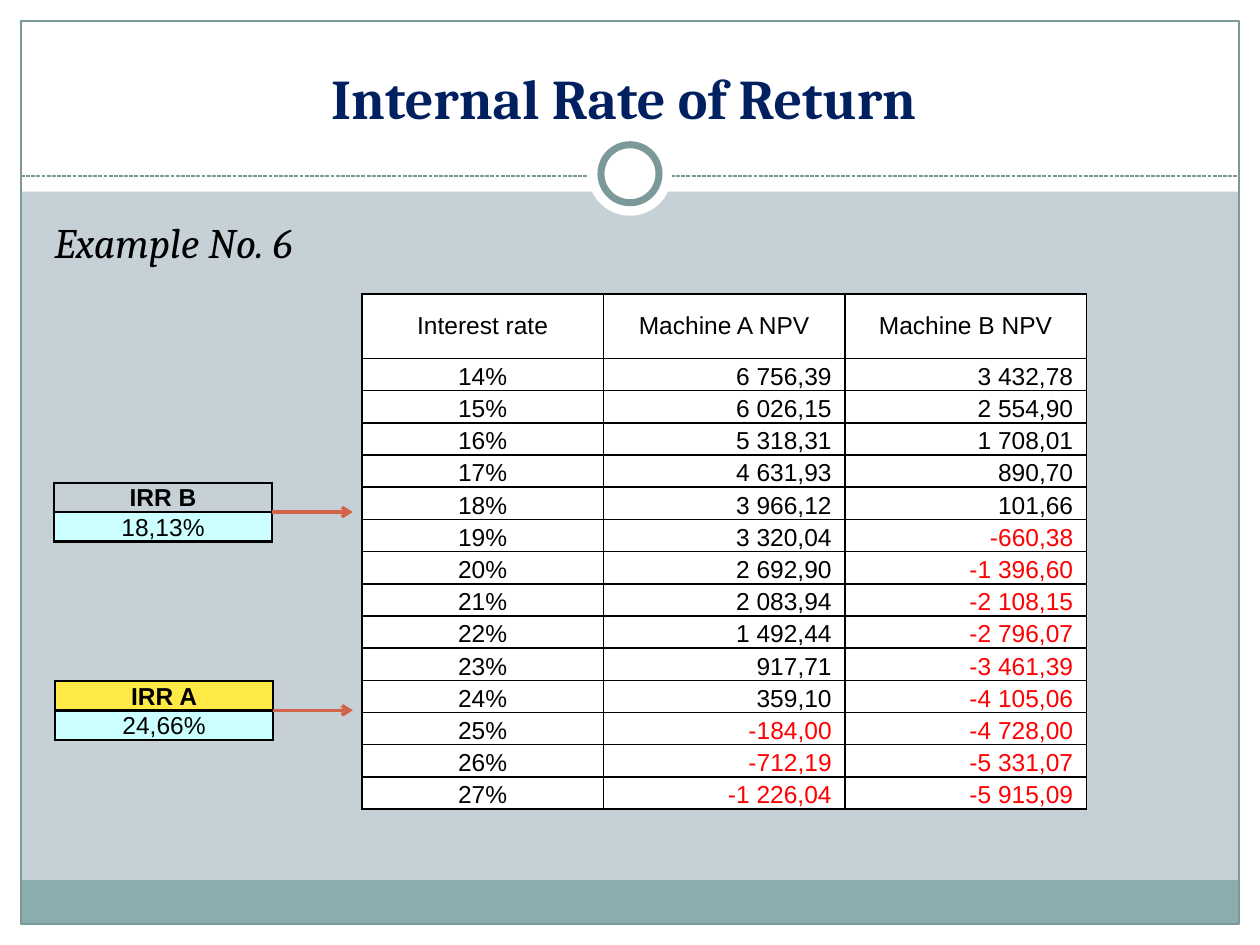
"""Build the Internal Rate of Return slide with its NPV table and IRR callouts."""
from lxml.etree import SubElement
from pptx import Presentation
from pptx.dml.color import RGBColor
from pptx.enum.dml import MSO_LINE
from pptx.enum.shapes import MSO_CONNECTOR, MSO_SHAPE
from pptx.enum.text import MSO_ANCHOR, PP_ALIGN
from pptx.oxml.ns import qn
from pptx.util import Pt

WHITE = RGBColor(0xFF, 0xFF, 0xFF)
BLACK = RGBColor(0x00, 0x00, 0x00)
RED = RGBColor(0xFF, 0x00, 0x00)
NAVY = RGBColor(0x00, 0x20, 0x60)
BACKGROUND = RGBColor(0xC5, 0xD1, 0xD7)
TEAL = RGBColor(0x8C, 0xAD, 0xAE)
FRAME = RGBColor(0x7C, 0x99, 0x9A)
ORANGE = RGBColor(0xD1, 0x63, 0x49)
YELLOW = RGBColor(0xFF, 0xE9, 0x47)
CYAN = RGBColor(0xCC, 0xFF, 0xFF)

HEADINGS = ("Interest rate", "Machine A NPV", "Machine B NPV")
FIRST_RATE = 14
NPV_ROWS = (
    ("6 756,39", "3 432,78"),
    ("6 026,15", "2 554,90"),
    ("5 318,31", "1 708,01"),
    ("4 631,93", "890,70"),
    ("3 966,12", "101,66"),
    ("3 320,04", "-660,38"),
    ("2 692,90", "-1 396,60"),
    ("2 083,94", "-2 108,15"),
    ("1 492,44", "-2 796,07"),
    ("917,71", "-3 461,39"),
    ("359,10", "-4 105,06"),
    ("-184,00", "-4 728,00"),
    ("-712,19", "-5 331,07"),
    ("-1 226,04", "-5 915,09"),
)


def add_panel(slide, kind, box, fill=None, line=None, line_width=0.75):
    """Add a preset shape with an optional fill and outline."""
    shape = slide.shapes.add_shape(kind, *map(Pt, box))
    shape.shadow.inherit = False
    if fill is None:
        shape.fill.background()
    else:
        shape.fill.solid()
        shape.fill.fore_color.rgb = fill
    if line is None:
        shape.line.fill.background()
    else:
        shape.line.color.rgb = line
        shape.line.width = Pt(line_width)


def add_line(slide, start, end, color, width):
    """Add a straight connector without a shadow and return it."""
    connector = slide.shapes.add_connector(
        MSO_CONNECTOR.STRAIGHT, *map(Pt, (*start, *end)))
    connector.line.color.rgb = color
    connector.line.width = Pt(width)
    SubElement(connector._element.spPr, qn("a:effectLst"))
    return connector


def add_arrow(slide, start, end):
    """Add an orange arrow pointing at its end."""
    connector = add_line(slide, start, end, ORANGE, 2)
    SubElement(connector.line._get_or_add_ln(), qn("a:tailEnd"), type="arrow")


def write(paragraph, text, font, size, color, bold=False, italic=False):
    """Add one formatted run to a paragraph."""
    run = paragraph.add_run()
    run.text = text
    run.font.name = font
    run.font.size = Pt(size)
    run.font.color.rgb = color
    run.font.bold = bold
    run.font.italic = italic


def add_text(slide, box, anchor, alignment, text, **style):
    """Add a wrapping text box with a single paragraph."""
    frame = slide.shapes.add_textbox(*map(Pt, box)).text_frame
    frame.word_wrap = True
    frame.vertical_anchor = anchor
    paragraph = frame.paragraphs[0]
    paragraph.alignment = alignment
    write(paragraph, text, "Cambria", **style)


def add_grid(slide, left, top, column_widths, row_heights):
    """Add a table without built-in style banding."""
    table = slide.shapes.add_table(
        len(row_heights), len(column_widths), Pt(left), Pt(top),
        Pt(sum(column_widths)), Pt(sum(row_heights))).table
    table.first_row = False
    table.horz_banding = False
    for column, width in zip(table.columns, column_widths):
        column.width = Pt(width)
    for row, height in zip(table.rows, row_heights):
        row.height = Pt(height)
    return table


def fill_cell(cell, text, fill, border, color=BLACK, bold=False,
              alignment=PP_ALIGN.CENTER, anchor=MSO_ANCHOR.BOTTOM):
    """Write a cell's text and set its borders and fill."""
    cell.margin_left = cell.margin_right = Pt(3.6)
    cell.margin_top = cell.margin_bottom = 0
    cell.vertical_anchor = anchor
    paragraph = cell.text_frame.paragraphs[0]
    paragraph.alignment = alignment
    write(paragraph, text, "Arial", 14, color, bold)
    properties = cell._tc.get_or_add_tcPr()
    for edge in ("a:lnL", "a:lnR", "a:lnT", "a:lnB"):
        line = SubElement(properties, qn(edge), w=str(Pt(border)))
        solid = SubElement(line, qn("a:solidFill"))
        SubElement(solid, qn("a:srgbClr"), val=str(BLACK))
    if fill is None:
        cell.fill.background()
    else:
        cell.fill.solid()
        cell.fill.fore_color.rgb = fill


def add_npv_table(slide):
    """Add the table of net present values by interest rate."""
    table = add_grid(slide, 206.8, 168, [138] * len(HEADINGS),
                     [36.8] + [18.4] * len(NPV_ROWS))
    for column, heading in enumerate(HEADINGS):
        fill_cell(table.cell(0, column), heading, WHITE, 1,
                  anchor=MSO_ANCHOR.MIDDLE)
    for row, values in enumerate(NPV_ROWS, start=1):
        fill_cell(table.cell(row, 0), f"{FIRST_RATE + row - 1}%", WHITE, 1)
        for column, value in enumerate(values, start=1):
            fill_cell(table.cell(row, column), f"{value} ", WHITE, 1,
                      color=RED if value.startswith("-") else BLACK,
                      alignment=PP_ALIGN.RIGHT)


def add_irr_callout(slide, left, top, label, rate, label_fill):
    """Add a two-row IRR box with an arrow towards the NPV table."""
    width, row_height = 124.8, 16.8
    table = add_grid(slide, left, top, [width], [row_height] * 2)
    fill_cell(table.cell(0, 0), label, label_fill, 1.5, bold=True)
    fill_cell(table.cell(1, 0), rate, CYAN, 1.5)
    middle = top + row_height
    add_arrow(slide, (left + width, middle), (201.6, middle))


def add_frame(slide):
    """Add the margins, footer band, outline, divider and ring."""
    for box in ((0, 528, 720, 12), (0, 0, 720, 109.6),
                (0, 0, 12, 540), (708, 0, 12, 540)):
        add_panel(slide, MSO_SHAPE.RECTANGLE, box, WHITE)
    add_panel(slide, MSO_SHAPE.RECTANGLE, (12, 503, 696, 25), TEAL)
    add_panel(slide, MSO_SHAPE.RECTANGLE, (12, 12, 696, 516), line=FRAME)
    divider = add_line(slide, (12, 100.6), (708, 100.6), FRAME, 0.75)
    divider.line.dash_style = MSO_LINE.SQUARE_DOT
    add_panel(slide, MSO_SHAPE.OVAL, (336, 75.3, 48, 48), WHITE)
    add_panel(slide, MSO_SHAPE.OVAL, (343.4, 82.7, 33.2, 33.2),
              WHITE, FRAME, 4)


def main():
    """Create the slide and save the presentation."""
    presentation = Presentation()
    presentation.slide_width, presentation.slide_height = Pt(720), Pt(540)
    slide = presentation.slides.add_slide(presentation.slide_layouts[6])
    slide.background.fill.solid()
    slide.background.fill.fore_color.rgb = BACKGROUND
    add_frame(slide)
    add_text(slide, (24, 18, 672, 60), MSO_ANCHOR.BOTTOM, PP_ALIGN.CENTER,
             "Internal Rate of Return ", size=32, color=NAVY, bold=True)
    add_text(slide, (24, 120, 660, 360), MSO_ANCHOR.TOP, PP_ALIGN.LEFT,
             "Example No. 6", size=24, color=BLACK, italic=True)
    add_npv_table(slide)
    add_irr_callout(slide, 30.8, 275.8, "IRR B", "18,13%", None)
    add_irr_callout(slide, 31.4, 389.1, "IRR A", "24,66%", YELLOW)
    presentation.save("out.pptx")


if __name__ == "__main__":
    main()
